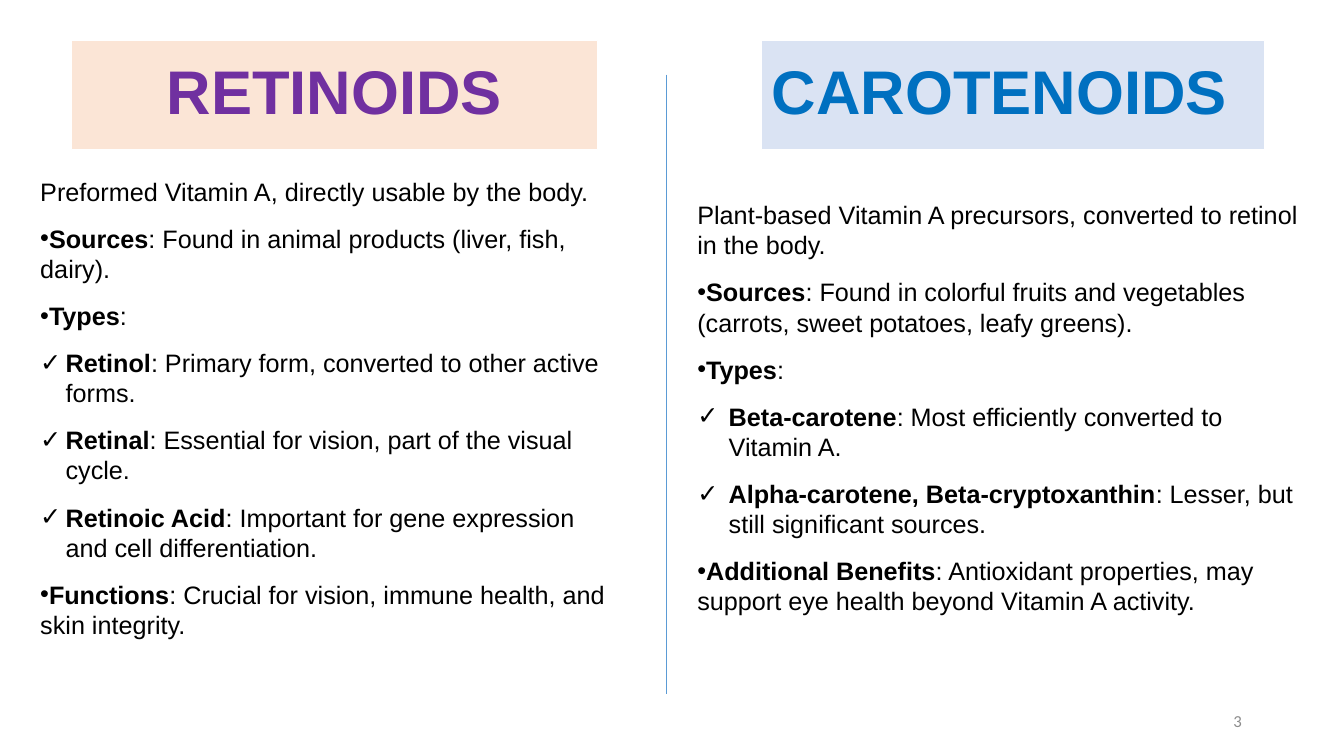
from lxml.etree import SubElement
from pptx import Presentation
from pptx.dml.color import RGBColor
from pptx.enum.shapes import MSO_CONNECTOR as CONN, MSO_SHAPE as SHAPE
from pptx.enum.text import MSO_ANCHOR as ANCHOR, MSO_AUTO_SIZE as AUTO, PP_ALIGN as ALIGN
from pptx.oxml.ns import qn
from pptx.util import Cm, Pt

# Each item: bullet, bold lead, remaining text
RETINOIDS = [
    ("", "", "Preformed Vitamin A, directly usable by the body."),
    ("•", "Sources", ": Found in animal products (liver, fish, dairy)."),
    ("•", "Types", ":"),
    ("✓", "Retinol", ": Primary form, converted to other active forms."),
    ("✓", "Retinal", ": Essential for vision, part of the visual cycle."),
    ("✓", "Retinoic Acid", ": Important for gene expression and cell differentiation."),
    ("•", "Functions", ": Crucial for vision, immune health, and skin integrity."),
]
CAROTENOIDS = [
    ("", "", "Plant-based Vitamin A precursors, converted to retinol in the body."),
    ("•", "Sources", ": Found in colorful fruits and vegetables "
                     "(carrots, sweet potatoes, leafy greens)."),
    ("•", "Types", ":"),
    ("✓", "Beta-carotene", ": Most efficiently converted to Vitamin A."),
    ("✓", "Alpha-carotene, Beta-cryptoxanthin", ": Lesser, but still significant sources."),
    ("•", "Additional Benefits", ": Antioxidant properties, "
                                 "may support eye health beyond Vitamin A activity."),
]


def rgb(color):
    return RGBColor.from_string(color)


def place(sp, left, top, width, height):
    sp.left, sp.top, sp.width, sp.height = Cm(left), Cm(top), Cm(width), Cm(height)


def add_text(p, text, size=18, color="000000", bold=False, font="Arial"):
    r = p.add_run()
    r.text = text
    r.font.size, r.font.bold, r.font.name = Pt(size), bold, font
    r.font.color.rgb = rgb(color)


def setup_frame(sp):
    tf = sp.text_frame
    tf.word_wrap = True
    tf.auto_size = AUTO.NONE
    tf.vertical_anchor = ANCHOR.MIDDLE
    return tf


def set_bullet(p, char, hang):
    pPr = p._p.get_or_add_pPr()
    indent = Cm(hang) if char == "✓" else 0
    pPr.set("marL", str(indent))
    pPr.set("indent", str(-indent))
    if char:
        SubElement(pPr, qn("a:buFont"), typeface="Arial")
        SubElement(pPr, qn("a:buChar"), char=char)
    else:
        SubElement(pPr, qn("a:buNone"))


def format_heading(sp, text, fill, color, align):
    sp.fill.solid()
    sp.fill.fore_color.rgb = rgb(fill)
    sp.line.color.rgb = rgb("FFFFFF")
    sp.line.width = Pt(0.75)
    p = setup_frame(sp).paragraphs[0]
    p.alignment = align
    p.line_spacing = 0.9
    add_text(p, text, size=44, color=color, bold=True)


def fill_list(sp, items, hang):
    tf = setup_frame(sp)
    for i, (char, lead, text) in enumerate(items):
        p = tf.add_paragraph() if i else tf.paragraphs[0]
        p.alignment = ALIGN.LEFT
        p.line_spacing = 1.0
        p.space_before, p.space_after = Pt(0), Pt(12)
        set_bullet(p, char, hang)
        if lead:
            add_text(p, lead, bold=True)
        add_text(p, text)


def add_divider(s, x, top, bottom):
    line = s.shapes.add_connector(CONN.STRAIGHT, Cm(x), Cm(top), Cm(x), Cm(bottom))
    line.line.color.rgb = rgb("5B9BD5")
    line.line.width = Pt(0.5)
    SubElement(line._element.spPr, qn("a:effectLst"))


def add_page_number(s, number):
    sp = s.shapes.add_textbox(Cm(23.93), Cm(17.65), Cm(7.62), Cm(1.02))
    p = setup_frame(sp).paragraphs[0]
    p.alignment = ALIGN.RIGHT
    add_text(p, number, size=12, color="8C8C8C", font="Calibri")


def main():
    prs = Presentation()
    prs.slide_width, prs.slide_height = Cm(33.87), Cm(19.05)
    s = prs.slides.add_slide(prs.slide_layouts[3])
    title, left, right = s.placeholders

    # Headings
    place(title, 1.8, 1.02, 13.26, 2.74)
    format_heading(title, "RETINOIDS", "FBE5D6", "7030A0", ALIGN.CENTER)
    heading = s.shapes.add_shape(SHAPE.RECTANGLE, Cm(19.2), Cm(1.02), Cm(12.67), Cm(2.74))
    heading.shadow.inherit = False
    format_heading(heading, "CAROTENOIDS", "DAE3F3", "0070C0", ALIGN.LEFT)

    # Lists on either side of the divider
    place(left, 0.76, 4.24, 15.04, 12.07)
    fill_list(left, RETINOIDS, hang=0.64)
    place(right, 17.32, 4.24, 15.95, 12.07)
    fill_list(right, CAROTENOIDS, hang=0.79)
    add_divider(s, 16.79, 1.88, 17.5)

    # Page number
    add_page_number(s, "3")
    prs.save("out.pptx")


if __name__ == "__main__":
    main()
